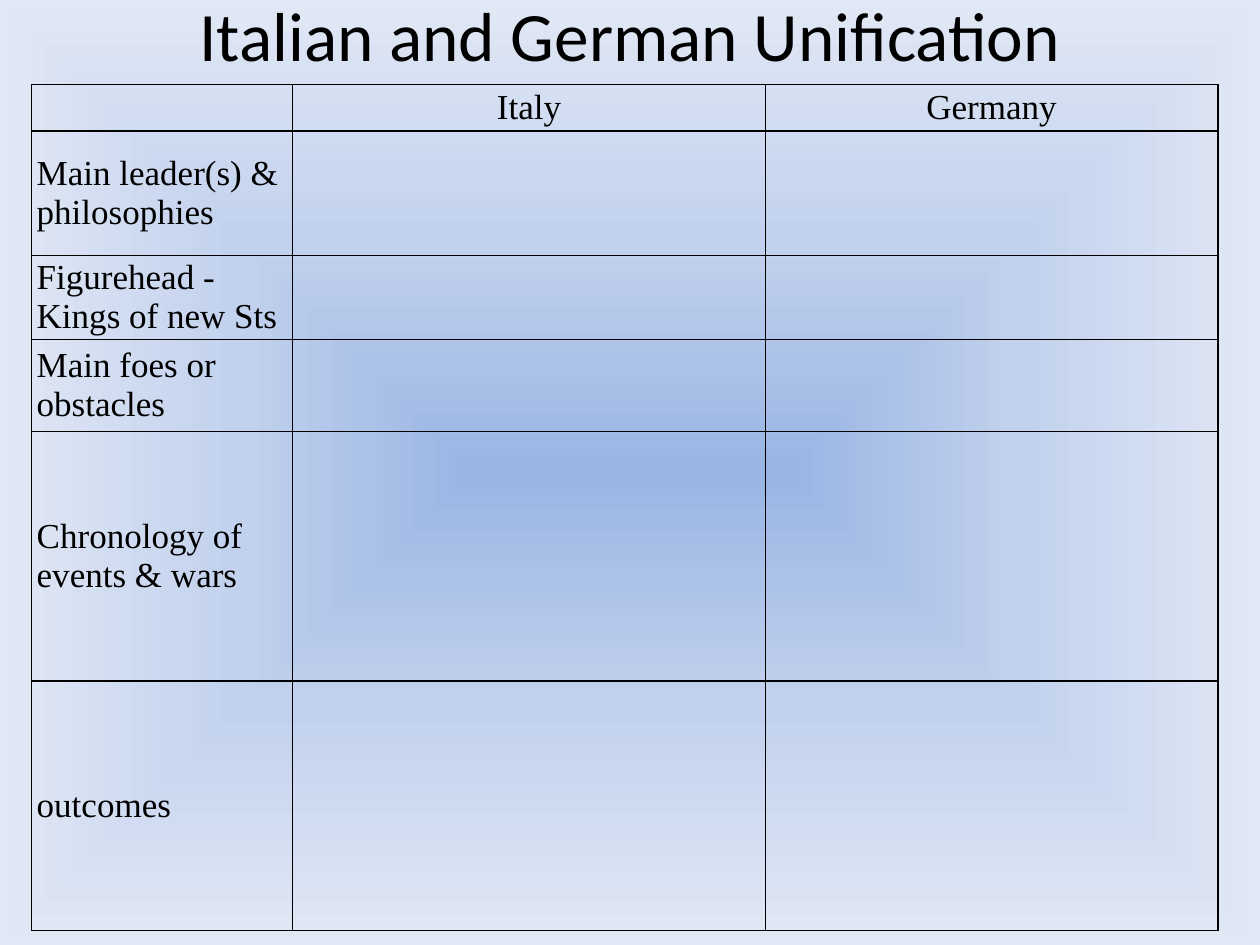
import pptx
import pptx.dml.color
import pptx.enum.text
import pptx.oxml
import pptx.oxml.ns
import pptx.util

Cm = pptx.util.Cm
Pt = pptx.util.Pt
RGBColor = pptx.dml.color.RGBColor
PP_ALIGN = pptx.enum.text.PP_ALIGN
MIDDLE = pptx.enum.text.MSO_ANCHOR.MIDDLE

BLACK = RGBColor(0x00, 0x00, 0x00)
GRADIENT = [
    (0, RGBColor(0x9A, 0xB5, 0xE4)),
    (50, RGBColor(0xC2, 0xD1, 0xED)),
    (100, RGBColor(0xE1, 0xE8, 0xF5)),
]
NAMESPACE = pptx.oxml.ns.nsdecls("a")

TITLE_FONT = {"name": "Calibri", "size": Pt(39.6)}
TABLE_FONT = {"name": "Times New Roman", "size": Pt(20)}
CELL_FORMAT = {
    "vertical_anchor": MIDDLE,
    "margin_left": Cm(0.1),
    "margin_right": Cm(0.1),
    "margin_top": 0,
    "margin_bottom": 0,
}
TITLE_FORMAT = {
    "vertical_anchor": MIDDLE,
    "word_wrap": True,
    "margin_top": 0,
    "margin_bottom": 0,
}
TABLE_FLAGS = {"first_row": False, "horz_banding": False}

COLUMN_WIDTHS = [5.26, 9.53, 9.12]
ROW_HEIGHTS = [0.94, 2.51, 1.32, 1.85, 5.03, 5.03]
COLUMN_HEADINGS = ["Italy", "Germany"]
ROW_HEADINGS = [
    "Main leader(s) & philosophies",
    "Figurehead -\nKings of new Sts",
    "Main foes or obstacles",
    "Chronology of events & wars",
    "outcomes",
]


def apply_format(target, values):
    for name, value in values.items():
        setattr(target, name, value)


def write_text(text_frame, text, font_format, alignment):
    text_frame.text = text
    for paragraph in text_frame.paragraphs:
        paragraph.alignment = alignment
        for run in paragraph.runs:
            apply_format(run.font, font_format)
            run.font.color.rgb = BLACK


def paint_background(slide):
    slide.background.fill.solid()
    properties = slide.element.xpath(".//p:bgPr")[0]
    stops = "".join(
        f'<a:gs pos="{position * 1000}"><a:srgbClr val="{color}"/></a:gs>'
        for position, color in GRADIENT
    )
    properties.replace(properties[0], pptx.oxml.parse_xml(
        f'<a:gradFill {NAMESPACE} rotWithShape="1"><a:gsLst>{stops}</a:gsLst>'
        '<a:path path="shape"><a:fillToRect l="50000" t="50000" r="50000" b="50000"/>'
        '</a:path></a:gradFill>'
    ))


def add_title(slide, left, top, width, height):
    text_frame = slide.shapes.add_textbox(left, top, width, height).text_frame
    apply_format(text_frame, TITLE_FORMAT)
    write_text(text_frame, "Italian and German Unification", TITLE_FONT, PP_ALIGN.CENTER)


def format_cell(cell):
    apply_format(cell, CELL_FORMAT)
    cell.fill.background()
    properties = cell._tc.get_or_add_tcPr()
    for index, side in enumerate("LRTB"):
        properties.insert(index, pptx.oxml.parse_xml(
            f'<a:ln{side} {NAMESPACE} w="{Pt(1)}"><a:solidFill>'
            f'<a:srgbClr val="{BLACK}"/></a:solidFill></a:ln{side}>'
        ))


def add_comparison_table(slide, left, top, width, height):
    table = slide.shapes.add_table(
        len(ROW_HEIGHTS), len(COLUMN_WIDTHS), left, top, width, height
    ).table
    apply_format(table, TABLE_FLAGS)
    for column, column_width in zip(table.columns, COLUMN_WIDTHS):
        column.width = Cm(column_width)
    for row, row_height in zip(table.rows, ROW_HEIGHTS):
        row.height = Cm(row_height)
    for cell in table.iter_cells():
        format_cell(cell)
    for index, heading in enumerate(COLUMN_HEADINGS, start=1):
        write_text(table.cell(0, index).text_frame, heading, TABLE_FONT, PP_ALIGN.CENTER)
    for index, heading in enumerate(ROW_HEADINGS, start=1):
        write_text(table.cell(index, 0).text_frame, heading, TABLE_FONT, PP_ALIGN.LEFT)


def main():
    presentation = pptx.Presentation()
    presentation.slide_width = Cm(25.4)
    presentation.slide_height = Cm(19.05)
    slide = presentation.slides.add_slide(presentation.slide_layouts[6])
    paint_background(slide)
    add_title(slide, Cm(1.27), Cm(0), Cm(22.86), Cm(1.35))
    add_comparison_table(
        slide, Cm(0.64), Cm(1.7), Cm(sum(COLUMN_WIDTHS)), Cm(sum(ROW_HEIGHTS))
    )
    presentation.save("out.pptx")


if __name__ == "__main__":
    main()
